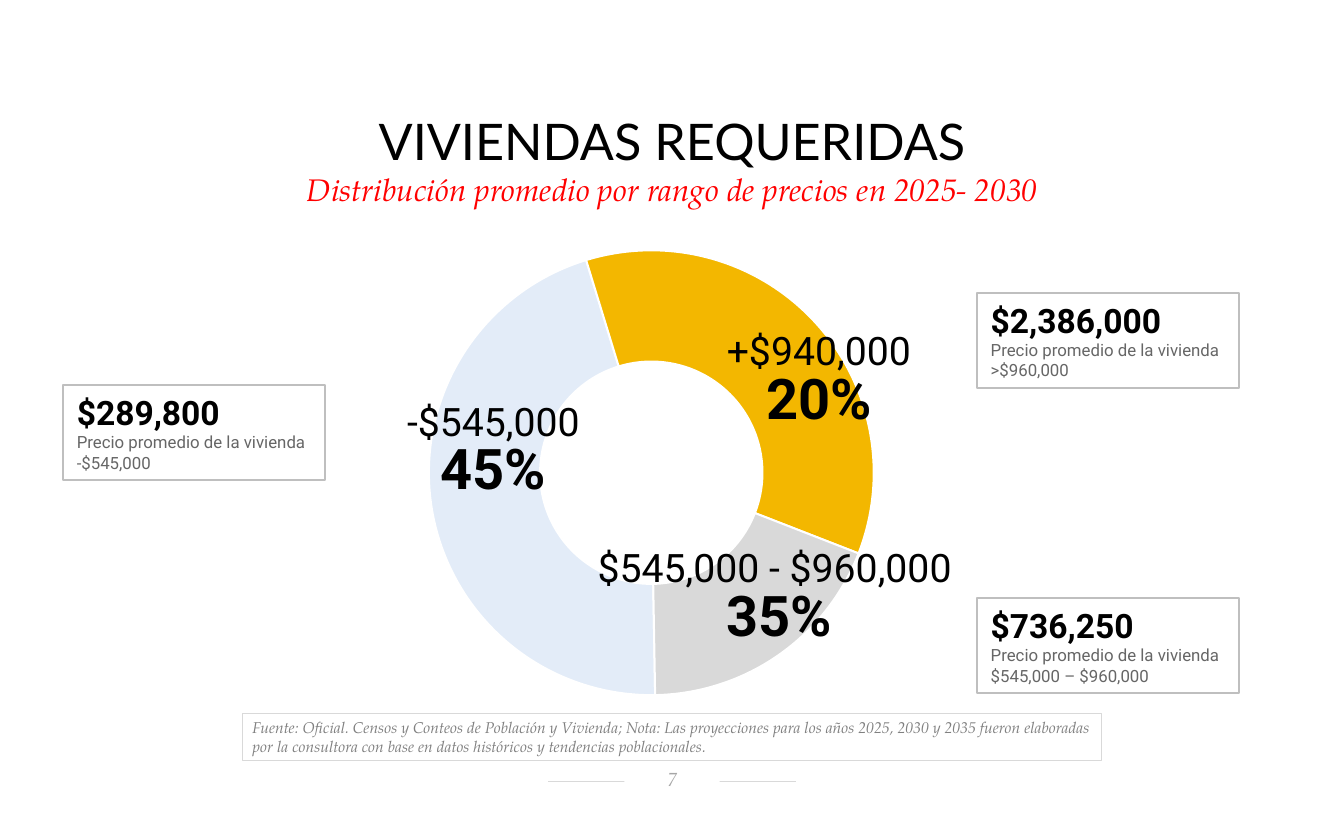
from dataclasses import dataclass

from pptx import Presentation
from pptx.chart.data import CategoryChartData
from pptx.dml.color import RGBColor
from pptx.enum.chart import XL_CHART_TYPE as ChartType
from pptx.enum.shapes import MSO_CONNECTOR as Connector, MSO_SHAPE as Preset
from pptx.enum.text import MSO_ANCHOR as Anchor, MSO_AUTO_SIZE as AutoSize, PP_ALIGN as Align
from pptx.oxml import parse_xml
from pptx.oxml.ns import nsdecls, qn
from pptx.util import Inches, Pt

COLUMNS, ROWS = 14, 8.5
UNIT = Inches(1)  # one grid column or row


@dataclass(frozen=True)
class Theme:
    title_font: str = "Lato"
    serif: str = "TeX Gyre Pagella"
    sans: str = "Roboto"
    chart_font: str = "Calibri"
    black: str = "000000"
    white: str = "FFFFFF"
    red: str = "FF0000"
    rule: str = "D9D9D9"
    card_edge: str = "BFBFBF"
    caption: str = "666666"
    source: str = "808080"
    number: str = "A6A6A6"
    slices: tuple = ("E3ECF8", "F3B700", "D9D9D9")
    title_size: float = 37.8
    subtitle_size: float = 23.4
    range_size: float = 29.4
    share_size: float = 42
    price_size: float = 25.2
    caption_size: float = 12.6
    source_size: float = 11.7
    number_size: float = 14.3
    chart_size: float = 10


THEME = Theme()


def rgb(value):
    return RGBColor.from_string(value)


def grid(*lengths):
    return [round(length * UNIT) for length in lengths]


def set_text(shape, lines, align=Align.LEFT, insets=(0.1, 0.05, 0.1, 0.05),
             anchor=Anchor.TOP, grow=True, spacing=None):
    """Fill a shape; each line is (text, font, size, colour, bold, italic)."""
    frame = shape.text_frame
    frame.word_wrap = True
    frame.auto_size = AutoSize.SHAPE_TO_FIT_TEXT if grow else AutoSize.NONE
    frame.vertical_anchor = anchor
    (frame.margin_left, frame.margin_top,
     frame.margin_right, frame.margin_bottom) = grid(*insets)
    for index, (text, font, size, colour, bold, italic) in enumerate(lines):
        para = frame.add_paragraph() if index else frame.paragraphs[0]
        para.alignment = align
        if spacing:
            para.line_spacing = spacing
        span = para.add_run()
        span.text = text
        span.font.name, span.font.size = font, Pt(size)
        span.font.bold, span.font.italic = bold, italic
        span.font.color.rgb = rgb(colour)


def add_text(page, box, lines, **options):
    set_text(page.shapes.add_textbox(*grid(*box)), lines, **options)


def add_panel(page, box, lines, fill=None, edge=None, edge_width=0.75, **options):
    panel = page.shapes.add_shape(Preset.RECTANGLE, *grid(*box))
    panel.shadow.inherit = False
    if fill:
        panel.fill.solid()
        panel.fill.fore_color.rgb = rgb(fill)
    else:
        panel.fill.background()
    if edge:
        panel.line.color.rgb = rgb(edge)
        panel.line.width = Pt(edge_width)
    else:
        panel.line.fill.background()
    set_text(panel, lines, **options)


def add_heading(page, box, title, subtitle):
    left, top, width, height = box
    add_text(page, (left, top, width, 0.75),
             [(title, THEME.title_font, THEME.title_size, THEME.black, False, False)],
             align=Align.CENTER)
    add_text(page, (left, top + 0.62, width, height - 0.62),
             [(subtitle, THEME.serif, THEME.subtitle_size, THEME.red, False, True)],
             align=Align.CENTER)


def add_doughnut(page, box, values):
    data = CategoryChartData()
    data.categories = [str(index + 1) for index in range(len(values))]
    data.add_series("Series 1", values)
    chart = page.shapes.add_chart(ChartType.DOUGHNUT, *grid(*box), data).chart
    chart.has_legend = chart.has_title = False
    chart.font.name, chart.font.size = THEME.chart_font, Pt(THEME.chart_size)
    chart.font.color.rgb = rgb(THEME.black)
    plot = chart.plots[0]
    plot.vary_by_categories = False
    plot.has_data_labels = False
    for index, colour in enumerate(THEME.slices):
        part = plot.series[0].points[index].format
        part.fill.solid()
        part.fill.fore_color.rgb = rgb(colour)
        part.line.color.rgb = rgb(THEME.white)
        part.line.width = Pt(1.5)

    # Rotation and hole
    ring = chart.element.find(".//" + qn("c:doughnutChart"))
    for tag, value in (("c:firstSliceAng", 179), ("c:holeSize", 61)):
        ring.find(qn(tag)).set("val", str(value))

    # Centred square plot area
    width, height = box[2:]
    side = 0.94 * height
    shares = {"x": (1 - side / width) / 2, "y": 0.03, "w": side / width, "h": 0.94}
    area = ring.getparent()
    for old in area.findall(qn("c:layout")):
        area.remove(old)
    parts = "".join(f'<c:{key} val="{share:.4f}"/>' for key, share in shares.items())
    area.insert(0, parse_xml(
        f'<c:layout {nsdecls("c")}><c:manualLayout><c:layoutTarget val="inner"/>'
        f'<c:xMode val="edge"/><c:yMode val="edge"/>{parts}</c:manualLayout></c:layout>'))


def add_range_label(page, box, price_range, share):
    add_text(page, box,
             [(price_range, THEME.sans, THEME.range_size, THEME.black, False, False),
              (share, THEME.sans, THEME.share_size, THEME.black, True, False)],
             align=Align.CENTER, spacing=0.85)


def add_price_card(page, box, price, price_range):
    caption = f"Precio promedio de la vivienda {price_range}"
    add_panel(page, box,
              [(price, THEME.sans, THEME.price_size, THEME.black, True, False),
               (caption, THEME.sans, THEME.caption_size, THEME.caption, False, False)],
              fill=THEME.white, edge=THEME.card_edge, edge_width=1.5,
              insets=(0.14, 0.07, 0.14, 0.07))


def add_source(page, box, text):
    add_panel(page, box,
              [(text, THEME.serif, THEME.source_size, THEME.source, False, True)],
              edge=THEME.rule)


def add_page_number(page, box, number):
    left, top, width, height = box
    middle = top + 0.16
    rule = page.shapes.add_connector(
        Connector.STRAIGHT, *grid(left, middle, left + width, middle))
    rule.line.color.rgb = rgb(THEME.rule)
    rule.line.width = Pt(0.75)
    rule._element.spPr.append(parse_xml(f'<a:effectLst {nsdecls("a")}/>'))
    plate = 0.99
    add_panel(page, (left + (width - plate) / 2, top, plate, height),
              [(number, THEME.serif, THEME.number_size, THEME.number, False, True)],
              fill=THEME.white, align=Align.CENTER, anchor=Anchor.MIDDLE,
              insets=(0.1, 0.02, 0.09, 0.04), grow=False)


def main():
    deck = Presentation()
    deck.slide_width, deck.slide_height = grid(COLUMNS, ROWS)
    page = deck.slides.add_slide(deck.slide_layouts[6])

    add_page_number(page, (5.71, 7.98, 2.58, 0.29), "7")
    add_doughnut(page, (2.53, 2.46, 8.51, 4.93), (46, 36, 19))
    add_source(page, (2.53, 7.43, 8.94, 0.49),
               "Fuente: Oficial. Censos y Conteos de Población y Vivienda; Nota: Las "
               "proyecciones para los años 2025, 2030 y 2035 fueron elaboradas por "
               "la consultora con base en datos históricos y tendencias poblacionales.")
    add_heading(page, (0.19, 1.1, 13.62, 1.11), "VIVIENDAS REQUERIDAS",
                "Distribución promedio por rango de precios en 2025- 2030")

    # Labels over the ring
    for left, top, price_range, share in (
            (2.96, 4.16, "-$545,000", "45%"),
            (5.94, 5.69, "$545,000 - $960,000 ", "35%"),
            (6.35, 3.43, "+$940,000", "20%")):
        add_range_label(page, (left, top, 4.36, 1.12), price_range, share)

    # Average price cards
    for left, top, price, price_range in (
            (0.66, 4.01, "$289,800", "-$545,000"),
            (10.18, 3.05, "$2,386,000", ">$960,000"),
            (10.18, 6.23, "$736,250", "$545,000 – $960,000")):
        add_price_card(page, (left, top, 2.73, 0.99), price, price_range)

    deck.save("out.pptx")


if __name__ == "__main__":
    main()
